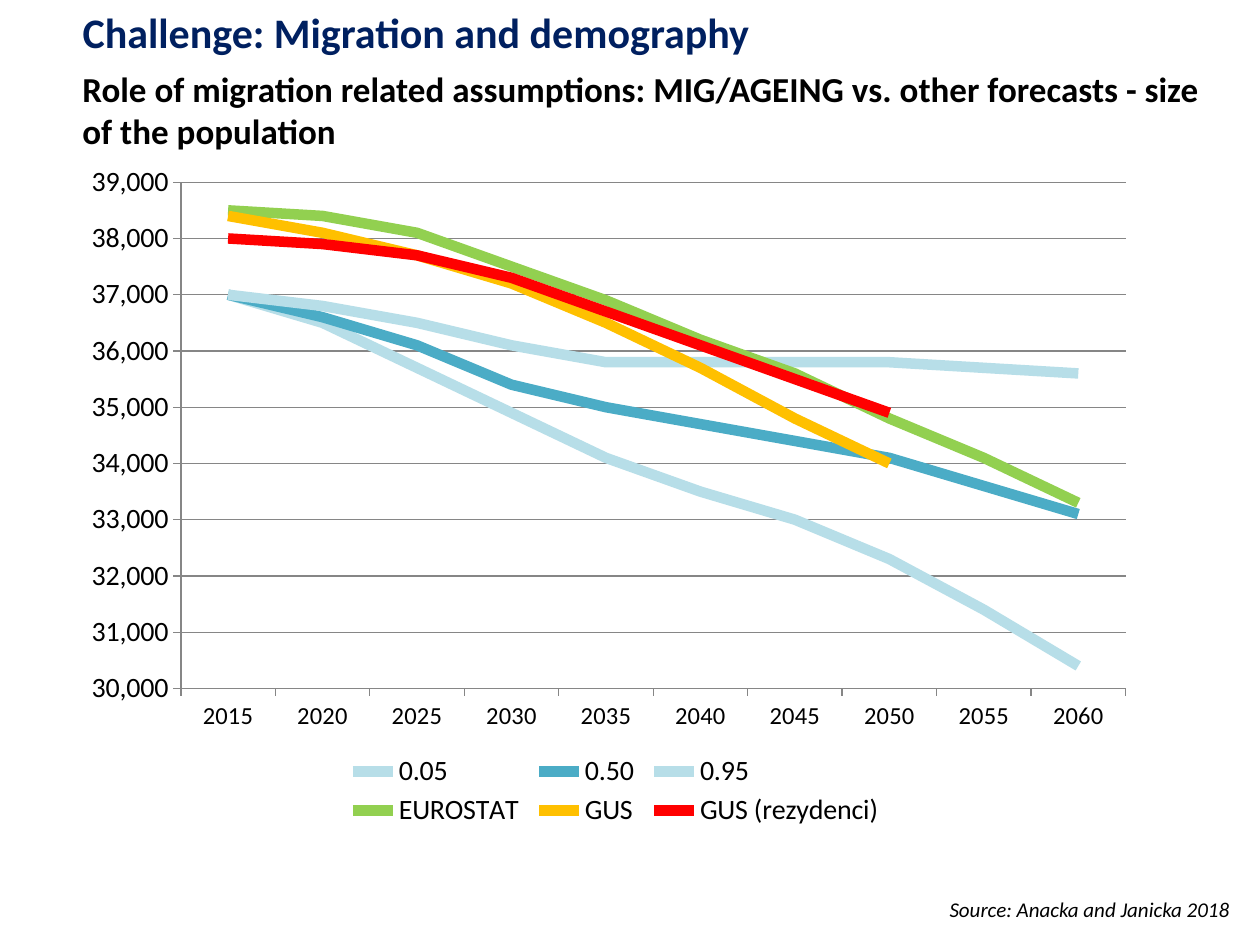
from lxml import etree
from pptx import Presentation
from pptx.chart.data import CategoryChartData
from pptx.dml.color import RGBColor
from pptx.enum.chart import XL_CHART_TYPE as ChartType
from pptx.enum.chart import XL_LEGEND_POSITION as LegendPos
from pptx.enum.chart import XL_TICK_MARK as Tick
from pptx.enum.text import MSO_ANCHOR as Anchor
from pptx.enum.text import MSO_AUTO_SIZE as AutoSize
from pptx.enum.text import PP_ALIGN as Align
from pptx.oxml.ns import qn
from pptx.util import Pt

YEARS = range(2015, 2061, 5)
FORECASTS = [
    ("0.05", "B7DEE8", [37000, 36500, 35700, 34900, 34100, 33500, 33000, 32300, 31400, 30400]),
    ("0.50", "4BACC6", [37000, 36600, 36100, 35400, 35000, 34700, 34400, 34100, 33600, 33100]),
    ("0.95", "B7DEE8", [37000, 36800, 36500, 36100, 35800, 35800, 35800, 35800, 35700, 35600]),
    ("EUROSTAT", "92D050", [38500, 38400, 38100, 37500, 36900, 36200, 35600, 34800, 34100, 33300]),
    ("GUS", "FFC000", [38400, 38100, 37700, 37200, 36500, 35700, 34800, 34000, None, None]),
    ("GUS (rezydenci)", "FF0000",
     [38000, 37900, 37700, 37300, 36700, 36100, 35500, 34900, None, None]),
]


def rgb(hex_color):
    return RGBColor.from_string(hex_color)


def set_layout(parent, after, inner, **fractions):
    """Place a chart part by fractions of the chart area, after the named child if any."""
    for old in parent.findall(qn("c:layout")):
        parent.remove(old)
    layout = etree.Element(qn("c:layout"))
    manual = etree.SubElement(layout, qn("c:manualLayout"))
    settings = [("layoutTarget", "inner")] if inner else []
    settings += [("xMode", "edge"), ("yMode", "edge")] + list(fractions.items())
    for tag, value in settings:
        etree.SubElement(manual, qn(f"c:{tag}")).set("val", str(value))
    if after:
        parent.find(qn(after)).addnext(layout)
    else:
        parent.insert(0, layout)


class SlideBuilder:
    font = "Calibri"
    black = "000000"
    navy = "002060"
    grid = "868686"

    def __init__(self, prs):
        self.slide = prs.slides.add_slide(prs.slide_layouts[5])

    def style(self, font, size, color=black, bold=False, italic=False):
        font.name, font.size = self.font, Pt(size)
        font.bold, font.italic = bold, italic
        font.color.rgb = rgb(color)

    def fill_text(self, sp, text, size, anchor=Anchor.TOP, **look):
        tf = sp.text_frame
        tf.word_wrap = True
        tf.auto_size = AutoSize.NONE
        tf.vertical_anchor = anchor
        p = tf.paragraphs[0]
        p.text = text
        p.alignment = Align.LEFT
        self.style(p.font, size, **look)

    def title(self, text, x, y, w, h):
        sp = self.slide.shapes.title
        sp.left, sp.top, sp.width, sp.height = Pt(x), Pt(y), Pt(w), Pt(h)
        self.fill_text(sp, text, 24, color=self.navy, bold=True)

    def text(self, text, x, y, w, h, size, **look):
        sp = self.slide.shapes.add_textbox(Pt(x), Pt(y), Pt(w), Pt(h))
        self.fill_text(sp, text, size, **look)

    def line_chart(self, categories, series, x, y, w, h):
        data = CategoryChartData(number_format="#,##0")
        data.categories = [str(c) for c in categories]
        for name, _, values in series:
            data.add_series(name, values)
        chart = self.slide.shapes.add_chart(
            ChartType.LINE, Pt(x), Pt(y), Pt(w), Pt(h), data).chart
        self.style(chart.font, 10)
        chart.has_title = False
        chart.plots[0].vary_by_categories = False
        for line, (_, color, _) in zip(chart.plots[0].series, series):
            line.smooth = False
            line.format.line.width = Pt(6)
            line.format.line.color.rgb = rgb(color)
        self.axes(chart)
        self.legend(chart)

    def axes(self, chart):
        for axis, size in ((chart.category_axis, 14), (chart.value_axis, 16)):
            axis.major_tick_mark, axis.minor_tick_mark = Tick.OUTSIDE, Tick.NONE
            axis.format.line.color.rgb = rgb(self.grid)
            self.style(axis.tick_labels.font, size)
        values = chart.value_axis
        values.minimum_scale, values.maximum_scale = 30000, 39000
        values.major_unit = 1000
        values.tick_labels.number_format = "#,##0"
        values.tick_labels.number_format_is_linked = False
        values.has_major_gridlines = True
        values.major_gridlines.format.line.color.rgb = rgb(self.grid)
        plot_area = chart.element.find(f".//{qn('c:plotArea')}")
        set_layout(plot_area, None, True, x=0.1, y=0.04, w=0.88, h=0.74)

    def legend(self, chart):
        chart.has_legend = True
        legend = chart.legend
        legend.position = LegendPos.BOTTOM
        legend.include_in_layout = False
        self.style(legend.font, 16)
        legend_xml = chart.element.find(f".//{qn('c:legend')}")
        set_layout(legend_xml, "c:legendPos", False, x=0.25, y=0.87, w=0.51, h=0.12)


def main():
    prs = Presentation()
    prs.slide_width, prs.slide_height = Pt(720), Pt(540)
    s = SlideBuilder(prs)
    s.title("Challenge: Migration and demography", 40, 0, 620, 32)
    s.text("Role of migration related assumptions: MIG/AGEING vs. other forecasts - "
           "size of the population", 40, 35, 672, 80, 20, bold=True)
    s.line_chart(YEARS, FORECASTS, 42, 88.5, 613.5, 391)
    s.text("Source: Anacka and Janicka 2018", 535.5, 508.5, 176, 21.5, 12,
           anchor=Anchor.MIDDLE, italic=True)
    prs.save("out.pptx")


if __name__ == "__main__":
    main()
